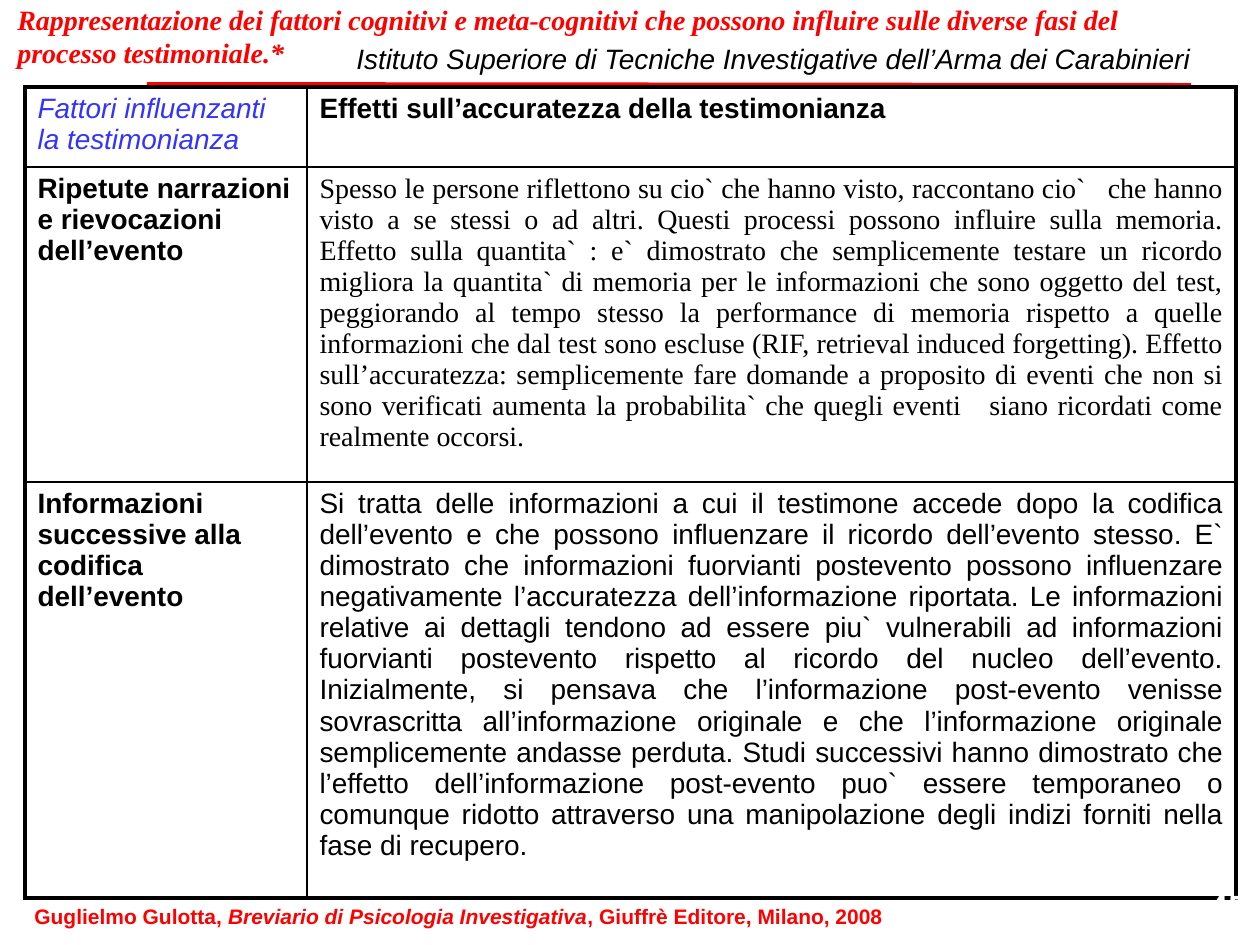
from dataclasses import dataclass

from lxml.etree import SubElement
from pptx import Presentation
from pptx.dml.color import RGBColor as Color
from pptx.enum.shapes import MSO_CONNECTOR as Connector
from pptx.enum.text import PP_ALIGN as Align
from pptx.oxml.ns import qn
from pptx.util import Emu, Pt

SCALE = 914400 / 126


@dataclass(frozen=True)
class Theme:
    black: str = "000000"
    white: str = "FFFFFF"
    red: str = "FF0000"
    blue: str = "3333FF"
    sans: str = "Arial"
    serif: str = "Times New Roman"
    body: int = 16
    number: int = 20
    source: int = 12
    rule: float = 4.5
    outer_border: float = 2.25
    inner_border: float = 1


THEME = Theme()

TITLE = (
    "Rappresentazione dei fattori cognitivi e meta-cognitivi che possono influire "
    "sulle diverse fasi del processo testimoniale.*"
)
INSTITUTE = "Istituto Superiore di Tecniche Investigative dell’Arma dei Carabinieri"
REPETITION = (
    "Spesso le persone riflettono su cio` che hanno visto, raccontano cio`   che hanno "
    "visto a se stessi o ad altri. Questi processi possono influire sulla memoria. "
    "Effetto sulla quantita` : e` dimostrato che semplicemente testare un ricordo "
    "migliora la quantita` di memoria per le informazioni che sono oggetto del test, "
    "peggiorando al tempo stesso la performance di memoria rispetto a quelle "
    "informazioni che dal test sono escluse (RIF, retrieval induced forgetting). "
    "Effetto sull’accuratezza: semplicemente fare domande a proposito di eventi che "
    "non si sono verificati aumenta la probabilita` che quegli eventi   siano ricordati "
    "come realmente occorsi."
)
LATER_INFORMATION = (
    "Si tratta delle informazioni a cui il testimone accede dopo la codifica "
    "dell’evento e che possono influenzare il ricordo dell’evento stesso. E` "
    "dimostrato che informazioni fuorvianti postevento possono influenzare "
    "negativamente l’accuratezza dell’informazione riportata. Le informazioni "
    "relative ai dettagli tendono ad essere piu` vulnerabili ad informazioni "
    "fuorvianti postevento rispetto al ricordo del nucleo dell’evento. Inizialmente, "
    "si pensava che l’informazione post-evento venisse sovrascritta all’informazione "
    "originale e che l’informazione originale semplicemente andasse perduta. Studi "
    "successivi hanno dimostrato che l’effetto dell’informazione post-evento puo` "
    "essere temporaneo o comunque ridotto attraverso una manipolazione degli indizi "
    "forniti nella fase di recupero."
)


def px(value):
    return Emu(round(value * SCALE))


def add_run(paragraph, text, size=THEME.body, font=THEME.sans, color=THEME.black,
            bold=False, italic=False):
    run = paragraph.add_run()
    run.text = text
    run.font.size = Pt(size)
    run.font.name = font
    run.font.color.rgb = Color.from_string(color)
    run.font.bold = bold
    run.font.italic = italic


def add_text(slide, left, top, width, height, runs, align=Align.LEFT):
    box = slide.shapes.add_textbox(px(left), px(top), px(width), px(height))
    box.text_frame.word_wrap = True
    paragraph = box.text_frame.paragraphs[0]
    paragraph.alignment = align
    for text, style in runs:
        add_run(paragraph, text, **style)


def add_rule(slide, left, top, right, bottom):
    rule = slide.shapes.add_connector(
        Connector.STRAIGHT, px(left), px(top), px(right), px(bottom))
    rule.line.color.rgb = Color.from_string(THEME.red)
    rule.line.width = Pt(THEME.rule)
    SubElement(rule.line._get_or_add_ln(), qn("a:round"))
    SubElement(rule._element.spPr, qn("a:effectLst"))


def set_borders(cell, outer_sides):
    properties = cell._tc.get_or_add_tcPr()
    for index, side in enumerate("LRTB"):
        width = THEME.outer_border if side in outer_sides else THEME.inner_border
        line = SubElement(properties, qn(f"a:ln{side}"), w=str(Pt(width)))
        fill = SubElement(line, qn("a:solidFill"))
        SubElement(fill, qn("a:srgbClr"), val=THEME.black)
        properties.insert(index, line)


def add_table(slide, left, top, widths, heights, rows):
    table = slide.shapes.add_table(
        len(heights), len(widths), px(left), px(top),
        px(sum(widths)), px(sum(heights))).table
    for column, width in zip(table.columns, widths):
        column.width = px(width)
    for row, height in zip(table.rows, heights):
        row.height = px(height)
    for row_index, row in enumerate(rows):
        for column_index, (text, align, style) in enumerate(row):
            cell = table.cell(row_index, column_index)
            cell.fill.solid()
            cell.fill.fore_color.rgb = Color.from_string(THEME.white)
            paragraph = cell.text_frame.paragraphs[0]
            paragraph.alignment = align
            add_run(paragraph, text, **style)
            outer_sides = "L" if column_index == 0 else "R"
            if row_index == 0:
                outer_sides += "T"
            if row_index == len(rows) - 1:
                outer_sides += "B"
            set_borders(cell, outer_sides)


def main():
    presentation = Presentation()
    presentation.slide_width = px(1260)
    presentation.slide_height = px(945)
    slide = presentation.slides.add_slide(presentation.slide_layouts[6])

    add_rule(slide, 147, 86, 1191, 87)
    add_text(slide, 344, 35, 883, 47, [(INSTITUTE, {"italic": True})])

    heading = {"bold": True}
    add_table(slide, 25, 87, [282, 929], [79, 315, 416], [
        [("Fattori influenzanti la testimonianza", Align.LEFT,
          {"color": THEME.blue, "italic": True}),
         ("Effetti sull’accuratezza della testimonianza", Align.LEFT, heading)],
        [("Ripetute narrazioni e rievocazioni dell’evento", Align.LEFT, heading),
         (REPETITION, Align.JUSTIFY, {"font": THEME.serif})],
        [("Informazioni successive alla codifica dell’evento", Align.LEFT, heading),
         (LATER_INFORMATION, Align.JUSTIFY, {})],
    ])

    add_text(slide, 1137, 879, 123, 66,
             [("45", {"size": THEME.number, "color": THEME.white, "bold": True})],
             Align.RIGHT)
    source = {"size": THEME.source, "color": THEME.red, "bold": True}
    add_text(slide, 22, 897, 1153, 50, [
        ("Guglielmo Gulotta, ", source),
        ("Breviario di Psicologia Investigativa", {**source, "italic": True}),
        (", Giuffrè Editore, Milano, 2008", source),
    ])
    add_text(slide, 5, -4, 1171, 81, [
        (TITLE, {"font": THEME.serif, "color": THEME.red, "bold": True, "italic": True}),
    ])

    presentation.save("out.pptx")


if __name__ == "__main__":
    main()
